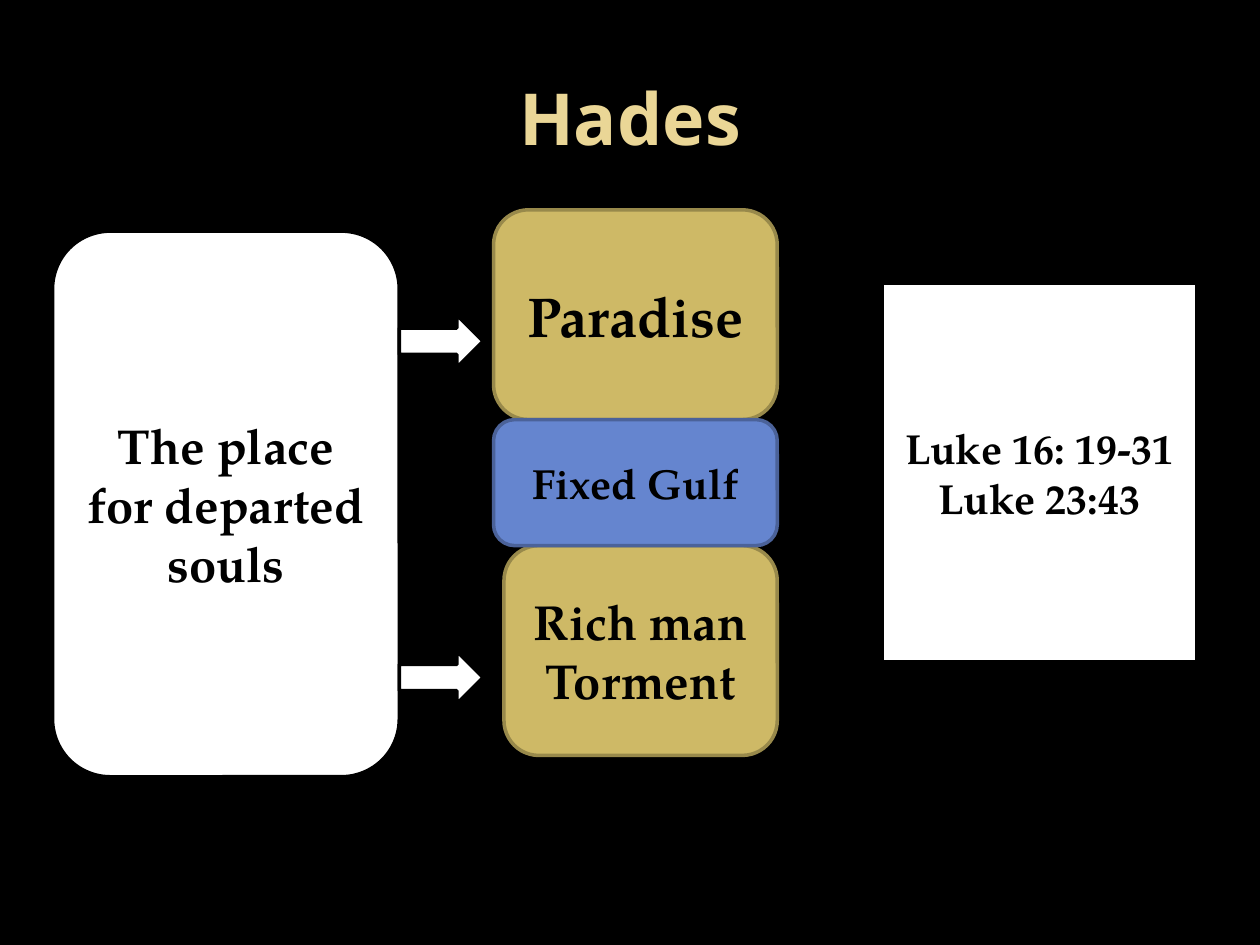
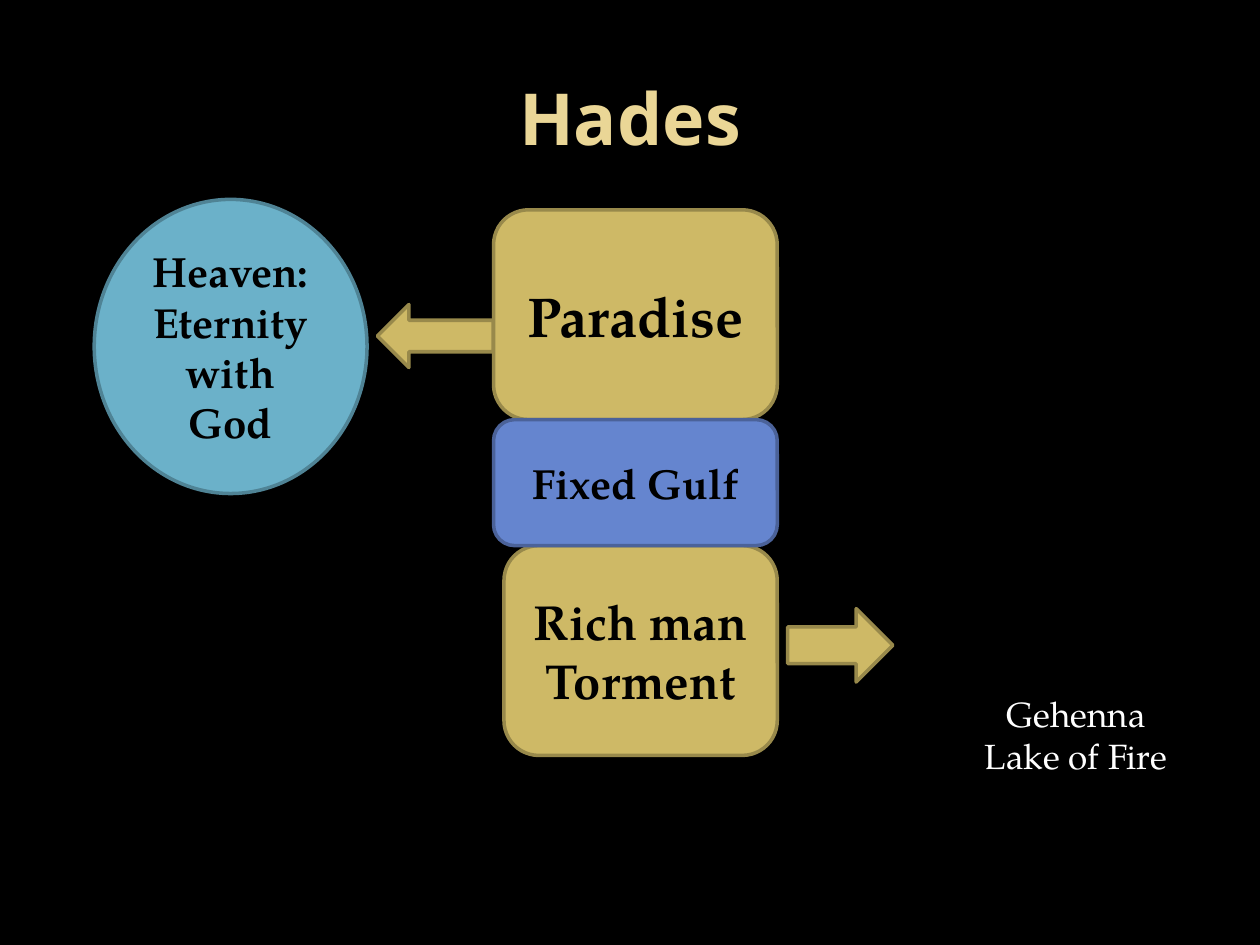
import pptx
import pptx.util
import pptx.dml.color
import pptx.enum.shapes
import pptx.enum.text

Cm = pptx.util.Cm
Pt = pptx.util.Pt
RGB = pptx.dml.color.RGBColor
KIND = pptx.enum.shapes.MSO_SHAPE

# Shared colours and fonts
BLACK = RGB(0x00, 0x00, 0x00)
WHITE = RGB(0xFF, 0xFF, 0xFF)
CREAM = RGB(0xEA, 0xD6, 0x96)
GOLD = RGB(0xCE, 0xB9, 0x66)
BRONZE = RGB(0x98, 0x89, 0x4B)
BLUE = RGB(0x65, 0x85, 0xCF)
NAVY = RGB(0x4B, 0x62, 0x99)
SKY = RGB(0x6B, 0xB1, 0xC9)
TEAL = RGB(0x4F, 0x83, 0x95)
HEAD = "Noto Sans"
BODY = "TeX Gyre Pagella"

# Fill and line of each look
GILT = (GOLD, BRONZE)
GULF = (BLUE, NAVY)
PLAIN = (WHITE, BLACK)
HEAVEN = (SKY, TEAL)
DARK = (BLACK, BLACK)

# Column in the middle: left, top, width, height in cm
TOWER = (9.95, 4.23, 5.72, 11)


def set_text(frame, text, font, size, color, bold=True):
    """Centre the text in its frame and format every run."""
    frame.text = text
    frame.word_wrap = True
    frame.vertical_anchor = pptx.enum.text.MSO_ANCHOR.MIDDLE
    for para in frame.paragraphs:
        para.alignment = pptx.enum.text.PP_ALIGN.CENTER
        for run in para.runs:
            run.font.name = font
            run.font.size = Pt(size)
            run.font.bold = bold
            run.font.color.rgb = color


def add_block(slide, kind, box, look, text="", size=24, color=BLACK, bold=True):
    """Draw a filled shape in a box given in cm."""
    shape = slide.shapes.add_shape(kind, *map(Cm, box))
    shape.shadow.inherit = False
    shape.fill.solid()
    shape.fill.fore_color.rgb, shape.line.color.rgb = look
    shape.line.width = Pt(2)
    if text:
        set_text(shape.text_frame, text, BODY, size, color, bold)


def add_tower(slide, box):
    """Stack Paradise, the gulf and Torment from top to bottom."""
    left, top, width, height = box
    room = 4.23
    inset = 0.21
    kind = KIND.ROUNDED_RECTANGLE
    add_block(slide, kind, (left, top, width, room), GILT, "Paradise", 32)
    add_block(slide, kind, (left + inset, top + height - room, width - inset, room),
              GILT, "Rich man\nTorment", 28)
    add_block(slide, kind, (left, top + room, width, height - 2 * room),
              GULF, "Fixed Gulf")


def add_souls(slide, box):
    """Place the panel of souls with two arrows leaving its right side."""
    left, top, width, height = box
    add_block(slide, KIND.ROUNDED_RECTANGLE, box, PLAIN,
              "The place for departed souls", 28)
    for drop in (1.69, 8.47):
        add_block(slide, KIND.RIGHT_ARROW, (left + width, top + drop, 1.69, 1.06), PLAIN)


def add_heaven(slide, box):
    """Place heaven with an arrow pointing at it from the right."""
    left, top, width, height = box
    add_block(slide, KIND.LEFT_ARROW, (left + width + 0.21, top + 2.12, 2.33, 1.27), GILT)
    add_block(slide, KIND.OVAL, box, HEAVEN, "Heaven:\nEternity with God")


def add_lake(slide, box):
    """Place the lake of fire with an arrow pointing at it from the left."""
    left, top, width, height = box
    add_block(slide, KIND.RIGHT_ARROW, (left - 2.75, top + 0.42, 2.12, 1.48), GILT)
    add_block(slide, KIND.OVAL, box, DARK, "Gehenna\nLake of Fire", 20, WHITE, False)


def start_slide(deck):
    """Add a slide with the title and column that both slides share."""
    slide = deck.slides.add_slide(deck.slide_layouts[5])
    title = slide.shapes.title
    title.left, title.top, title.width, title.height = map(Cm, (1.27, 0.76, 22.86, 3.18))
    set_text(title.text_frame, "Hades", HEAD, 41, CREAM)
    add_tower(slide, TOWER)
    return slide


def main():
    deck = pptx.Presentation()
    deck.slide_width, deck.slide_height = Cm(25.4), Cm(19.05)
    back = deck.slide_master.background.fill
    back.solid()
    back.fore_color.rgb = BLACK

    # Where souls wait
    slide = start_slide(deck)
    add_souls(slide, (1.06, 4.66, 6.99, 11))
    add_block(slide, KIND.RECTANGLE, (17.78, 5.72, 6.35, 7.62), PLAIN,
              "Luke 16: 19-31\nLuke 23:43")

    # Where souls go
    slide = start_slide(deck)
    add_heaven(slide, (1.9, 4.02, 5.5, 5.93))
    add_lake(slide, (18.63, 11.85, 6.14, 5.93))

    deck.save("out.pptx")


if __name__ == "__main__":
    main()
